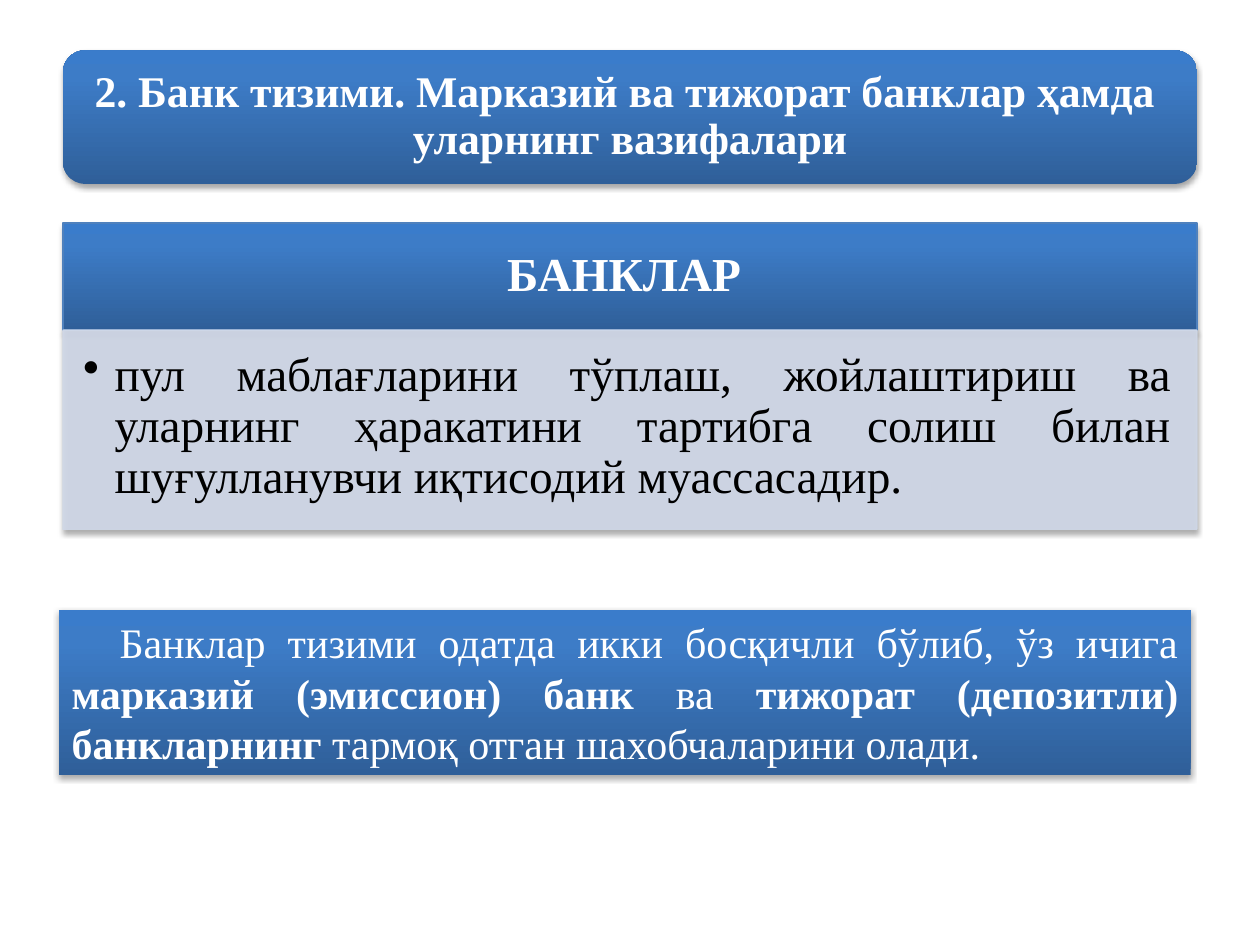
from pptx import Presentation
from pptx.dml.color import RGBColor
from pptx.enum.shapes import MSO_SHAPE
from pptx.enum.text import MSO_ANCHOR, PP_ALIGN
from pptx.oxml import parse_xml
from pptx.oxml.ns import nsdecls
from pptx.util import Inches, Pt

RECT, ROUNDED = MSO_SHAPE.RECTANGLE, MSO_SHAPE.ROUNDED_RECTANGLE
CENTER, JUSTIFY = PP_ALIGN.CENTER, PP_ALIGN.JUSTIFY
TOP, MIDDLE = MSO_ANCHOR.TOP, MSO_ANCHOR.MIDDLE
FONT = "Times New Roman"
COLORS = {"dark": "2F5F99", "mid": "3D7CC7", "light": "3A7CCB", "border": "4F81BD",
          "pale": "D0D8E8", "white": "FFFFFF", "black": "000000"}
GRADIENT = [(0, "dark"), (80, "mid"), (100, "light")]

# Content: each text is a list of (words, bold) pieces
TITLE = [("2. Банк тизими. Марказий ва тижорат банклар ҳамда \nуларнинг вазифалари", True)]
HEADING = [("БАНКЛАР ", True)]
DEFINITION = [("пул маблағларини тўплаш, жойлаштириш ва уларнинг ҳаракатини тартибга солиш "
               "билан шуғулланувчи иқтисодий муассасадир. ", False)]
SUMMARY = [("Банклар тизими одатда икки босқичли бўлиб, ўз ичига ", False),
           ("марказий (эмиссион) банк", True),
           (" ва ", False),
           ("тижорат (депозитли) банкларнинг", True),
           (" тармоқ отган шахобчаларини олади. ", False)]

# Layout in inches
LEFT, WIDTH = 0.5, 9
HEADING_TOP, HEADING_HEIGHT = 1.77, 0.85


def xml(tag, inner):
    return parse_xml(f"<a:{tag} {nsdecls('a')}>{inner}</a:{tag}>")


def add_alpha(fill_format_owner, percent):
    for color in fill_format_owner.iter("{*}srgbClr"):
        color.append(parse_xml(f'<a:alpha {nsdecls("a")} val="{percent * 1000}"/>'))


def add_panel(slide, box, kind=RECT, fill=None, line=None, alpha=100):
    """Draw a shadowed panel; without a fill it gets the blue gradient."""
    panel = slide.shapes.add_shape(kind, *map(Inches, box))
    properties = panel._element.spPr
    if fill:
        panel.fill.solid()
        panel.fill.fore_color.rgb = RGBColor.from_string(COLORS[fill])
    else:
        stops = "".join(f'<a:gs pos="{at * 1000}"><a:srgbClr val="{COLORS[name]}"/></a:gs>'
                        for at, name in GRADIENT)
        properties.insert(2, xml("gradFill", f'<a:gsLst>{stops}</a:gsLst>'
                                             '<a:lin ang="16200000" scaled="0"/>'))
    if line:
        panel.line.color.rgb = RGBColor.from_string(COLORS[line])
        panel.line.width = Pt(0.75)
    else:
        panel.line.fill.background()
    if alpha < 100:
        add_alpha(properties, alpha)
    properties.append(xml("effectLst", f'<a:outerShdw blurRad="{Pt(3.1)}" dist="{Pt(1.8)}" '
                          'dir="5400000" rotWithShape="0"><a:srgbClr val="000000">'
                          '<a:alpha val="35000"/></a:srgbClr></a:outerShdw>'))
    return panel


def write(panel, pieces, size, color="white", align=CENTER, anchor=MIDDLE,
          insets=(0.1, 0.05, 0.1, 0.05), spacing=None, margin=0, indent=0, bullet=None):
    frame = panel.text_frame
    frame.word_wrap = True
    frame.vertical_anchor = anchor
    (frame.margin_left, frame.margin_top,
     frame.margin_right, frame.margin_bottom) = map(Inches, insets)
    paragraph = frame.paragraphs[0]
    paragraph.alignment = align
    paragraph.line_spacing = spacing
    settings = paragraph._p.get_or_add_pPr()
    settings.set("marL", str(Inches(margin)))
    settings.set("indent", str(Inches(indent)))
    if bullet:
        settings.append(parse_xml(f'<a:buChar {nsdecls("a")} char="{bullet}"/>'))
    for words, bold in pieces:
        for number, row in enumerate(words.split("\n")):
            if number:
                paragraph.add_line_break()
            run = paragraph.add_run()
            run.text = row
            run.font.name, run.font.size, run.font.bold = FONT, Pt(size), bold
            run.font.color.rgb = RGBColor.from_string(COLORS[color])


def main():
    deck = Presentation()
    deck.slide_width, deck.slide_height = Inches(10), Inches(7.5)
    slide = deck.slides.add_slide(deck.slide_layouts[6])

    # Title banner
    title = add_panel(slide, (LEFT, 0.4, WIDTH, 1.06), ROUNDED)
    write(title, TITLE, 25, insets=(0.15,) * 4, spacing=0.9)

    # Term and its definition
    heading = add_panel(slide, (LEFT, HEADING_TOP, WIDTH, HEADING_HEIGHT), line="border")
    write(heading, HEADING, 27, insets=(0.21, 0.12, 0.21, 0.12), spacing=0.9)
    definition = add_panel(slide, (LEFT, HEADING_TOP + HEADING_HEIGHT, WIDTH, 1.58),
                           fill="pale", line="pale", alpha=90)
    write(definition, DEFINITION, 27, "black", JUSTIFY, TOP, (0.16, 0.16, 0.21, 0.24),
          spacing=0.9, margin=0.25, indent=-0.25, bullet="•")

    # Summary of the banking system
    summary = add_panel(slide, (0.47, 4.84, 8.98, 1.31))
    write(summary, SUMMARY, 24, align=JUSTIFY, indent=0.38)

    deck.save("out.pptx")


if __name__ == "__main__":
    main()
